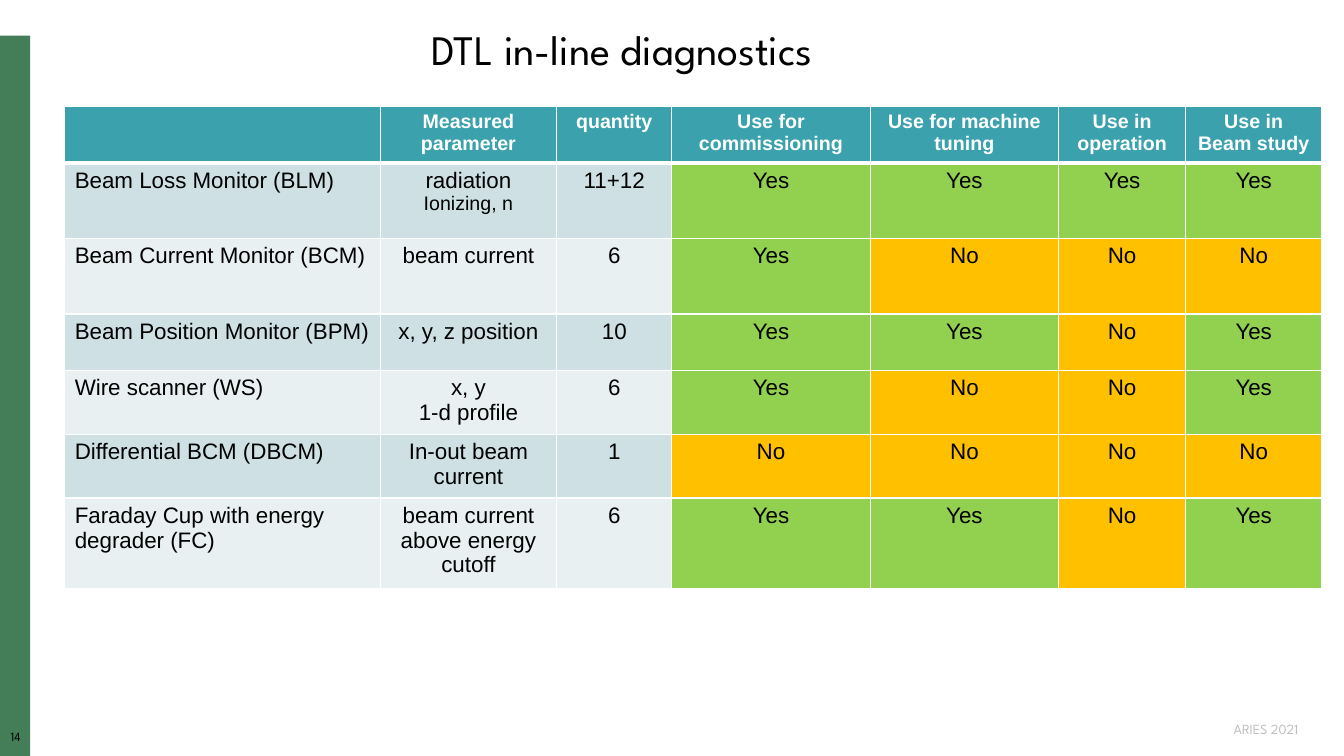
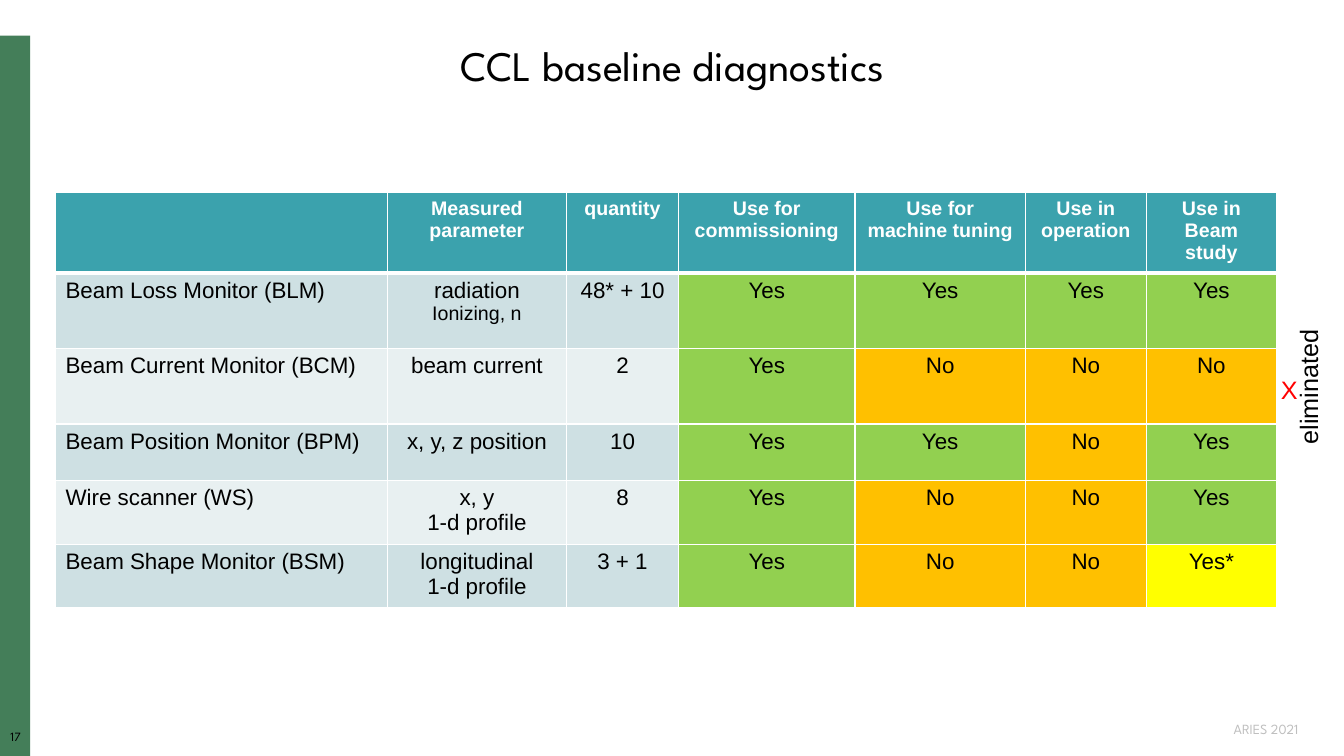
from dataclasses import dataclass

from lxml import etree
from pptx import Presentation
from pptx.dml.color import RGBColor as RGB
from pptx.enum.shapes import MSO_SHAPE as SHAPE
from pptx.enum.text import MSO_ANCHOR as ANCHOR, MSO_AUTO_SIZE as AUTO, PP_ALIGN as ALIGN
from pptx.oxml.ns import qn
from pptx.util import Cm, Pt


@dataclass(frozen=True)
class Theme:
    head_font: str = "League Spartan"
    body_font: str = "Arial"
    black: str = "000000"
    white: str = "FFFFFF"
    grey: str = "BFBFBF"
    red: str = "FF0000"
    band: str = "447E59"
    header: str = "3BA2AD"
    stripes: tuple = ("CEE0E3", "E8F0F1")
    title_size: int = 30
    note_size: int = 18
    cell_size: int = 16
    small_size: int = 14
    footer_size: int = 10
    number_size: int = 9


T = Theme()
ANSWER_FILLS = {"Yes": "92D050", "No": "FFC000", "Yes*": "FFFF00"}


def add_text(tf, text, size, font=T.body_font, color=T.black, bold=False,
             align=ALIGN.LEFT, spacing=None):
    """Write one paragraph per line, using the empty first paragraph."""
    for i, line in enumerate(text.split("\n")):
        p = tf.add_paragraph() if i else tf.paragraphs[0]
        p.alignment = align
        if spacing:
            p.line_spacing = spacing
        r = p.add_run()
        r.text = line
        r.font.name, r.font.size, r.font.bold = font, Pt(size), bold
        r.font.color.rgb = RGB.from_string(color)


def style_cell(cell, fill, top=1, bottom=1):
    """White borders, widths in points, and a solid fill."""
    tc_pr = cell._tc.get_or_add_tcPr()
    for side, width in (("L", 1), ("R", 1), ("T", top), ("B", bottom)):
        ln = etree.SubElement(tc_pr, qn(f"a:ln{side}"), w=str(Pt(width)))
        solid = etree.SubElement(ln, qn("a:solidFill"))
        etree.SubElement(solid, qn("a:srgbClr"), val=T.white)
    cell.fill.solid()
    cell.fill.fore_color.rgb = RGB.from_string(fill)


# Content: each row is height, device, parameter, quantity, four answers
HEADERS = ["", "Measured parameter", "quantity", "Use for\ncommissioning",
           "Use for machine tuning", "Use in\noperation", "Use in\nBeam study"]
BLM = "Beam Loss Monitor (BLM)"
BCM = "Beam Current Monitor (BCM)"
BPM = "Beam Position Monitor (BPM)"
WS = "Wire scanner (WS)"
SMALL_LINE = "Ionizing, n"

SLIDES = [
    dict(
        number="14", title="DTL in-line diagnostics",
        title_box=(1.07, 0.61, 29.21, 1.68), table_at=(1.63, 2.67),
        widths=(7.95, 4.45, 2.9, 5, 4.75, 3.2, 3.43), header_height=1.39,
        rows=[
            (1.9, BLM, "radiation\n" + SMALL_LINE, "11+12", "Yes Yes Yes Yes"),
            (1.9, BCM, "beam current", "6", "Yes No No No"),
            (1.42, BPM, "x, y, z position", "10", "Yes Yes No Yes"),
            (1.5, WS, "x, y\n1-d profile", "6", "Yes No No Yes"),
            (1.5, "Differential BCM (DBCM)", "In-out beam current", "1", "No No No No"),
            (2.13, "Faraday Cup with energy degrader (FC)",
             "beam current above energy cutoff", "6", "Yes Yes No Yes"),
        ]),
    dict(
        number="17", title="CCL baseline diagnostics",
        title_box=(2.34, 1.02, 29.21, 2.49), table_at=(1.4, 4.85),
        widths=(8.36, 4.52, 2.82, 4.45, 4.29, 3.05, 3.28), header_height=1.9,
        rows=[
            (1.9, BLM, "radiation\n" + SMALL_LINE, "48* + 10", "Yes Yes Yes Yes"),
            (1.9, BCM, "beam current", "2", "Yes No No No"),
            (1.42, BPM, "x, y, z position", "10", "Yes Yes No Yes"),
            (1.5, WS, "x, y\n1-d profile", "8", "Yes No No Yes"),
            (1.5, "Beam Shape Monitor (BSM)", "longitudinal\n1-d profile", "3 + 1",
             "Yes No No Yes*"),
        ]),
]

prs = Presentation()
prs.slide_width, prs.slide_height = Cm(33.87), Cm(19.05)
layout = prs.slide_layouts[5]
slides = [prs.slides.add_slide(layout) for _ in SLIDES]

# Side band and footer, built once and moved to the shared layout
shapes = slides[0].shapes
band = shapes.add_shape(SHAPE.RECTANGLE, 0, Cm(0.9), Cm(0.76), Cm(18.15))
band.shadow.inherit = False
band.fill.solid()
band.fill.fore_color.rgb = RGB.from_string(T.band)
band.line.fill.background()
footer = shapes.add_textbox(Cm(22.25), Cm(18.11), Cm(10.72), Cm(0.51))
footer.text_frame.word_wrap = True
footer.text_frame.vertical_anchor = ANCHOR.MIDDLE
add_text(footer.text_frame, "ARIES 2021", T.footer_size, T.head_font, T.grey,
         align=ALIGN.RIGHT)
for sp in (band, footer):
    layout.shapes.element.append(sp.element)

for slide, data in zip(slides, SLIDES):
    # Title
    title = slide.shapes.title
    title.left, title.top, title.width, title.height = map(Cm, data["title_box"])
    tf = title.text_frame
    tf.auto_size, tf.vertical_anchor = AUTO.NONE, ANCHOR.TOP
    add_text(tf, data["title"], T.title_size, T.head_font, align=ALIGN.CENTER, spacing=0.9)

    # Slide number
    number = slide.shapes.add_textbox(0, Cm(18.4), Cm(0.79), Cm(0.43))
    tf = number.text_frame
    tf.word_wrap = True
    tf.margin_left = tf.margin_right = tf.margin_top = tf.margin_bottom = 0
    add_text(tf, data["number"], T.number_size, T.head_font, align=ALIGN.CENTER, spacing=0.9)

    # Table grid
    heights = [data["header_height"]] + [row[0] for row in data["rows"]]
    left, top = map(Cm, data["table_at"])
    table = slide.shapes.add_table(len(heights), len(HEADERS), left, top,
                                   Cm(sum(data["widths"])), Cm(sum(heights))).table
    table.horz_banding = False
    for col, width in zip(table.columns, data["widths"]):
        col.width = Cm(width)
    for row, height in zip(table.rows, heights):
        row.height = Cm(height)

    # Header row
    for c, label in enumerate(HEADERS):
        cell = table.cell(0, c)
        style_cell(cell, T.header, bottom=3)
        if label:
            add_text(cell.text_frame, label, T.small_size, color=T.white, bold=True,
                     align=ALIGN.CENTER)

    # Device rows
    for i, (_, device, parameter, quantity, answers) in enumerate(data["rows"]):
        for c, text in enumerate([device, parameter, quantity, *answers.split()]):
            cell = table.cell(i + 1, c)
            style_cell(cell, ANSWER_FILLS.get(text, T.stripes[i % 2]), top=1 if i else 3)
            add_text(cell.text_frame, text, T.cell_size,
                     align=ALIGN.CENTER if c else ALIGN.LEFT)
            for p in cell.text_frame.paragraphs:
                if p.text == SMALL_LINE:
                    p.runs[0].font.size = Pt(T.small_size)

# Remark beside the second table
for text, color, x, y, width, angle in (
        ("eliminated", T.black, 31.27, 9.24, 3.4, 270),
        ("X", T.red, 32.03, 9.32, 0.84, 0)):
    note = slides[1].shapes.add_textbox(Cm(x), Cm(y), Cm(width), Cm(1.02))
    note.rotation = angle
    note.text_frame.word_wrap = False
    add_text(note.text_frame, text, T.note_size, color=color)

prs.save("out.pptx")
